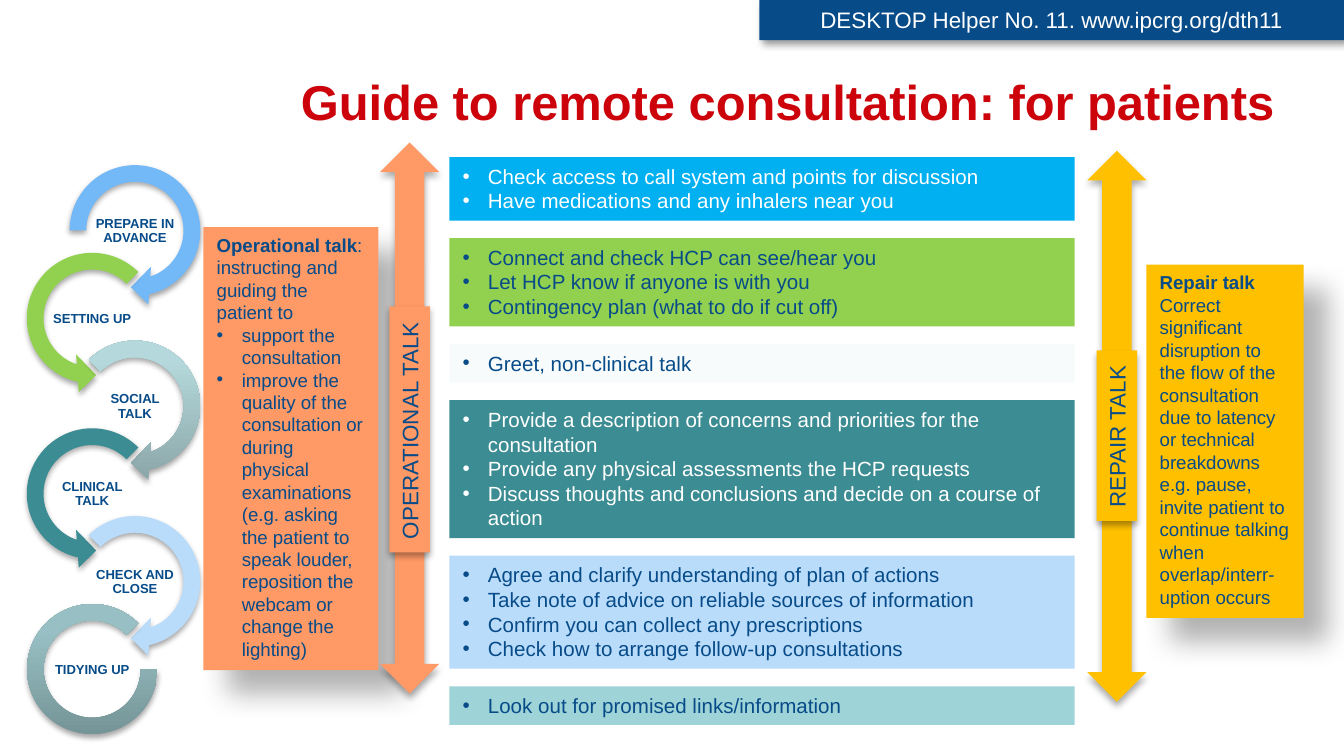
"""Build the remote consultation guide slide for patients."""
from lxml import etree
from pptx import Presentation
from pptx.dml.color import RGBColor
from pptx.enum.shapes import MSO_SHAPE as SHAPE
from pptx.enum.text import MSO_ANCHOR as ANCHOR, MSO_AUTO_SIZE as AUTO, PP_ALIGN as ALIGN
from pptx.oxml.ns import qn
from pptx.util import Pt

COLORS = {
    "navy": "074B88", "red": "CC030B", "white": "FFFFFF", "black": "000000",
    "sky": "73B9F8", "green": "92D050", "teal": "3C8C93", "pale": "B9DCFB",
    "cyan": "00B0F0", "frost": "F8FBFC", "mint": "9ED3D7",
    "amber": "FFC000", "orange": "FF9966",
    "mist_dark": "8BA6A8", "mist": "B4D8DB", "slate_dark": "759497", "slate": "98C0C4",
}
HEADER_SHADOW = (40, 4, 3, 45)
RING_SHADOW = (35, 3.1, 1.8, 90)
PANEL_SHADOW = (30, 15, 18, 45)
ARROW_SHADOW = (32, 3.5, 2.2, 90)

RIGHT_ARROW = (0.11, 11.423, 45, 135, 0.125)
FIRST_ARROW = (0.11, 11.423, 45, 108, 0.125)
LEFT_ARROW = (0.11, 11.423, 63, 189, 0.125)
STAGES = [
    ("PREPARE IN ADVANCE", SHAPE.CIRCULAR_ARROW, FIRST_ARROW, "sky"),
    ("SETTING UP", SHAPE.LEFT_CIRCULAR_ARROW, LEFT_ARROW, "green"),
    ("SOCIAL TALK", SHAPE.CIRCULAR_ARROW, RIGHT_ARROW, ("mist_dark", "mist")),
    ("CLINICAL TALK", SHAPE.LEFT_CIRCULAR_ARROW, LEFT_ARROW, "teal"),
    ("CHECK AND CLOSE", SHAPE.CIRCULAR_ARROW, RIGHT_ARROW, "pale"),
    ("TIDYING UP", SHAPE.BLOCK_ARC, (0, 189, 0.127), ("slate_dark", "slate")),
]
ADVICE = [
    ("cyan", "white", 2, ["Check access to call system and points for discussion",
                          "Have medications and any inhalers near you"]),
    ("green", "navy", 3, ["Connect and check HCP can see/hear you",
                          "Let HCP know if anyone is with you",
                          "Contingency plan (what to do if cut off)"]),
    ("frost", "navy", 1, ["Greet, non-clinical talk"]),
    ("teal", "white", 5, ["Provide a description of concerns and priorities for the consultation",
                          "Provide any physical assessments the HCP requests",
                          "Discuss thoughts and conclusions and decide on a course of action"]),
    ("pale", "navy", 4, ["Agree and clarify understanding of plan of actions",
                         "Take note of advice on reliable sources of information",
                         "Confirm you can collect any prescriptions",
                         "Check how to arrange follow-up consultations"]),
    ("mint", "navy", 1, ["Look out for promised links/information"]),
]
REPAIR = ["", "Correct significant disruption to the flow of the consultation due to latency or "
          "technical breakdowns e.g. pause, invite patient to continue talking when "
          "overlap/interr-uption occurs"]
OPERATIONAL = [": instructing and guiding the patient to",
               "support the consultation",
               "improve the quality of the consultation or during physical examinations "
               "(e.g. asking the patient to speak louder, reposition the webcam or change "
               "the lighting)"]


def rgb(name):
    """Return the named colour."""
    return RGBColor.from_string(COLORS[name])


class Deck:
    """Hold the style and the current slide."""

    font = "Arial"
    indent = 13.5

    def __init__(self, prs):
        """Add a title-only slide."""
        self.slide = prs.slides.add_slide(prs.slide_layouts[5])

    def style(self, r, size, color, bold=False):
        """Format one run."""
        r.font.name, r.font.size, r.font.bold = self.font, Pt(size), bold
        r.font.color.rgb = rgb(color)

    def title(self, text, x, y, w, h):
        """Fill and place the title placeholder."""
        sp = self.slide.shapes.title
        sp.left, sp.top, sp.width, sp.height = Pt(x), Pt(y), Pt(w), Pt(h)
        tf = sp.text_frame
        tf.text = text
        tf.auto_size, tf.vertical_anchor = AUTO.NONE, ANCHOR.MIDDLE
        p = tf.paragraphs[0]
        p.alignment = ALIGN.LEFT
        self.style(p.runs[0], 26.2, "red", True)

    def shape(self, kind, x, y, w, h, fill, shadow=None, adjust=()):
        """Add a borderless shape with a plain or two-colour fill."""
        sp = self.slide.shapes.add_shape(kind, Pt(x), Pt(y), Pt(w), Pt(h))
        for i, value in enumerate(adjust):
            sp.adjustments[i] = value
        if isinstance(fill, tuple):
            sp.fill.gradient()
            sp.fill.gradient_angle = 90
            for stop, name, pos in zip(sp.fill.gradient_stops, fill, (0, 0.8)):
                stop.color.rgb, stop.position = rgb(name), pos
        else:
            sp.fill.solid()
            sp.fill.fore_color.rgb = rgb(fill)
        sp.line.fill.background()
        sp.shadow.inherit = False
        if shadow:
            self.cast(sp, *shadow)
        return sp

    def cast(self, sp, alpha, blur, dist, angle):
        """Give a shape an outer shadow."""
        effects = sp._element.spPr.find(qn("a:effectLst"))
        outer = etree.SubElement(effects, qn("a:outerShdw"), blurRad=str(Pt(blur)),
                                 dist=str(Pt(dist)), dir=str(angle * 60000),
                                 algn="tl", rotWithShape="0")
        color = etree.SubElement(outer, qn("a:srgbClr"), val=COLORS["black"])
        etree.SubElement(color, qn("a:alpha"), val=str(alpha * 1000))

    def bullet(self, p):
        """Turn a paragraph into a list item."""
        pPr = p._p.get_or_add_pPr()
        pPr.set("marL", str(Pt(self.indent)))
        pPr.set("indent", str(-Pt(self.indent)))
        etree.SubElement(pPr, qn("a:buFont"), typeface=self.font)
        etree.SubElement(pPr, qn("a:buChar"), char="•")

    def fill_text(self, sp, lines, size, color, plain=0, lead="", align=ALIGN.LEFT):
        """Set paragraphs, bulleted after the plain ones, with an optional bold lead."""
        tf = sp.text_frame
        tf.word_wrap, tf.vertical_anchor = True, ANCHOR.TOP
        for i, line in enumerate(lines):
            p = tf.add_paragraph() if i else tf.paragraphs[0]
            p.alignment = align
            if i >= plain:
                self.bullet(p)
            for text, bold in ((lead if i == 0 else "", True), (line, False)):
                if text:
                    r = p.add_run()
                    r.text = text
                    self.style(r, size, color, bold)

    def label(self, text, x, y, w, h):
        """Add a small bold centred label."""
        tf = self.slide.shapes.add_textbox(Pt(x), Pt(y), Pt(w), Pt(h)).text_frame
        tf.margin_left = tf.margin_right = tf.margin_top = tf.margin_bottom = 0
        tf.word_wrap, tf.vertical_anchor = True, ANCHOR.MIDDLE
        p = tf.paragraphs[0]
        p.text, p.alignment, p.line_spacing = text, ALIGN.CENTER, 0.9
        self.style(p.runs[0], 7, "navy", True)

    def panel(self, x, y, w, h, fill, lead, lines, plain):
        """Add a shadowed explanation panel."""
        sp = self.shape(SHAPE.RECTANGLE, x, y, w, h, fill, PANEL_SHADOW)
        self.fill_text(sp, lines, 10, "navy", plain, lead)

    def talk_arrow(self, x, y, fill, text, length, middle):
        """Add a tall double arrow with an upright tag on it."""
        width, tag = 31.7, 21.8
        self.shape(SHAPE.UP_DOWN_ARROW, x, y, width, 295.2, fill, ARROW_SHADOW)
        sp = self.shape(SHAPE.RECTANGLE, x + (width - length) / 2, middle - tag / 2,
                        length, tag, fill, ARROW_SHADOW)
        sp.rotation = 270
        self.fill_text(sp, [text], 12, "navy", plain=1)
        sp.text_frame.word_wrap = False


def main():
    """Build and save the slide."""
    prs = Presentation()
    prs.slide_width, prs.slide_height = Pt(720), Pt(405)
    s = Deck(prs)
    s.title("Guide to remote consultation: for patients", 154, 31.7, 566, 44.6)
    sp = s.shape(SHAPE.RECTANGLE, 406.8, 0, 313.2, 21.6, "navy", HEADER_SHADOW)
    s.fill_text(sp, ["DESKTOP Helper No. 11. www.ipcrg.org/dth11"], 12, "white",
                plain=1, align=ALIGN.CENTER)

    for i, (text, kind, adjust, fill) in enumerate(STAGES):
        x, y = (8.7 if i % 2 else 31.6), 82.8 + 47 * i
        inset = 5.8 if kind == SHAPE.BLOCK_ARC else 0
        size = 81.4 - 2 * inset
        s.shape(kind, x + inset, y + inset, size, size, fill, RING_SHADOW, adjust)
        s.label(text, x + 18.1, y + 29.6, 45.2, 23)

    y = 84.2
    for fill, color, rows, lines in ADVICE:
        h = 7.4 + 13.3 * rows
        sp = s.shape(SHAPE.RECTANGLE, 240.8, y, 335, h, fill)
        s.fill_text(sp, lines, 11, color)
        y += h + 9.4

    s.panel(614.2, 141.8, 84.2, 189.2, "amber", "Repair talk", REPAIR, 2)
    s.talk_arrow(582.5, 80.8, "amber", "REPAIR TALK", 91.4, 233.4)
    s.panel(109, 121.7, 93.8, 237.4, "orange", "Operational talk", OPERATIONAL, 1)
    s.talk_arrow(203.6, 76.4, "orange", "OPERATIONAL TALK", 131.8, 230)
    prs.save("out.pptx")


if __name__ == "__main__":
    main()
